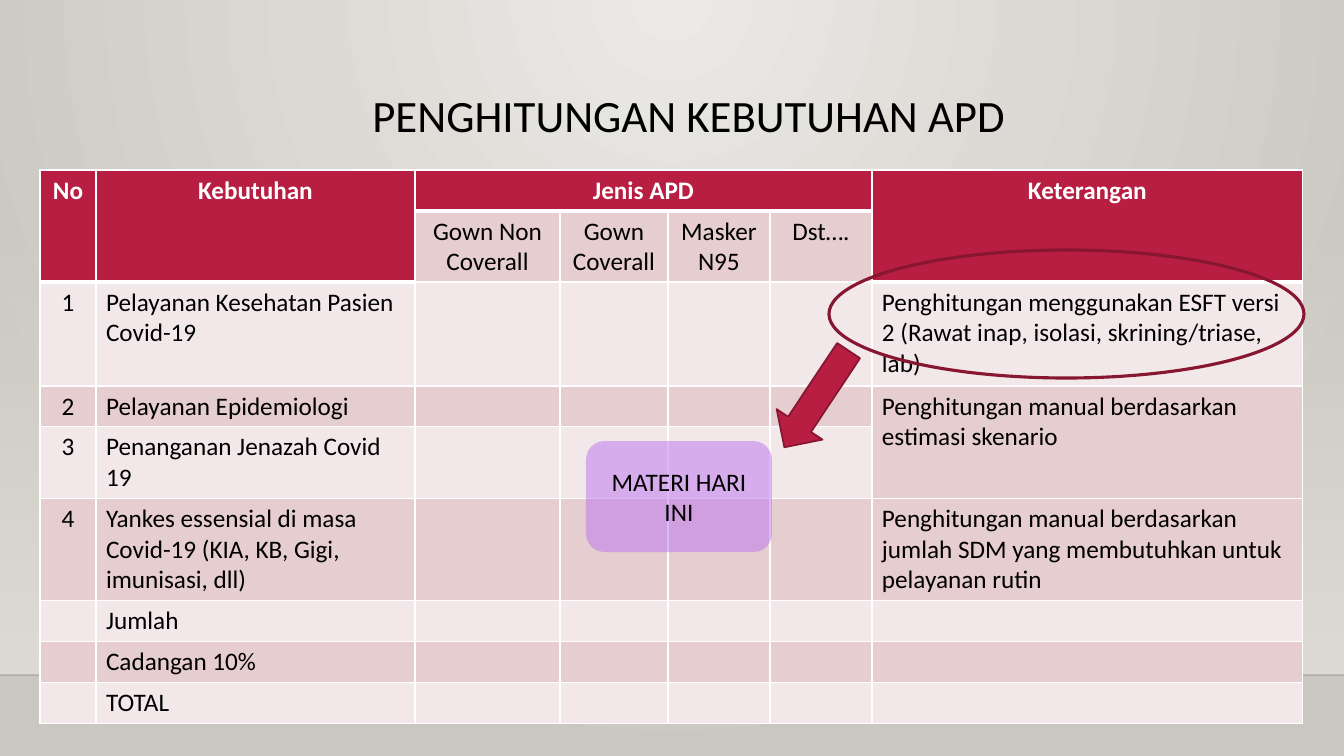
from lxml.etree import SubElement as Sub
from pptx import Presentation
from pptx.dml.color import RGBColor as RGB
from pptx.enum.shapes import MSO_CONNECTOR as Conn, MSO_SHAPE as Form
from pptx.enum.text import MSO_ANCHOR as Anchor, PP_ALIGN as Align
from pptx.oxml.ns import qn
from pptx.util import Pt

SCALE = 12192000 / 1344  # EMU per px
BLACK, WHITE = RGB(0, 0, 0), RGB(255, 255, 255)
RED, WINE = RGB(0xB7, 0x1E, 0x42), RGB(0x87, 0x16, 0x31)
ROSE, PALE = RGB(0xE6, 0xCD, 0xCF), RGB(0xF3, 0xE8, 0xE9)
LILAC, INK = RGB(0xBC, 0x72, 0xF0), RGB(0, 0, 1)
LIGHT, STONE, SAND = RGB(0xEC, 0xEA, 0xE7), RGB(0xCA, 0xC7, 0xC1), RGB(0xDF, 0xDB, 0xD5)

COLS = [56, 319, 145, 108, 102, 102, 431]
ROWS = [41, 71, 104, 40, 72, 102, 41, 41, 41]
GRID = [
    ["No", "Kebutuhan", "Jenis APD", "", "", "", "Keterangan"],
    ["", "", "Gown Non Coverall", "Gown Coverall", "Masker N95", "Dst….", ""],
    ["1", "Pelayanan Kesehatan Pasien Covid-19", "", "", "", "",
     "Penghitungan menggunakan ESFT versi 2 (Rawat inap, isolasi, skrining/triase, lab)"],
    ["2", "Pelayanan Epidemiologi", "", "", "", "",
     "Penghitungan manual berdasarkan estimasi skenario"],
    ["3", "Penanganan Jenazah Covid 19", "", "", "", "", ""],
    ["4", "Yankes essensial di masa Covid-19 (KIA, KB, Gigi, imunisasi, dll)", "", "", "", "",
     "Penghitungan manual berdasarkan jumlah SDM yang membutuhkan untuk pelayanan rutin"],
    ["", "Jumlah", "", "", "", "", ""],
    ["", "Cadangan 10%", "", "", "", "", ""],
    ["", "TOTAL", "", "", "", "", ""],
]
SPANS = [(0, 0, 1, 0), (0, 1, 1, 1), (0, 2, 0, 5), (0, 6, 1, 6), (3, 6, 4, 6)]


def px(*vals):
    return [round(v * SCALE) for v in vals]


def fade(node, part):
    """Set the opacity, in percent, of the first colour inside node."""
    tone = next(node.iter(qn("a:srgbClr")))
    Sub(tone, qn("a:alpha"), val=str(part * 1000))


class Deck:
    face = {"name": "Calibri", "size": Pt(18), "bold": False}

    def __init__(self):
        self.prs = Presentation()
        self.prs.slide_width, self.prs.slide_height = px(1344, 756)
        self.slide = self.prs.slides.add_slide(self.prs.slide_layouts[6])
        self.shapes = self.slide.shapes

    def blend(self, fill, *tones):
        fill.gradient()
        for stop, tone in zip(fill.gradient_stops, tones):
            stop.color.rgb = tone

    def ground(self):
        self.blend(self.slide.background.fill, LIGHT, STONE)
        grad = next(self.slide.element.iter(qn("a:gradFill")))
        grad.remove(grad.find(qn("a:lin")))
        ring = Sub(grad, qn("a:path"), {"path": "circle"})
        Sub(ring, qn("a:fillToRect"), l="43000", t="0", r="43000", b="100000")

    def text(self, frame, words, align=Align.CENTER, **style):
        para = frame.paragraphs[0]
        para.alignment = align
        run = para.add_run()
        run.text = words
        look = {**self.face, **style}
        run.font.color.rgb = look.pop("color", BLACK)
        for key, val in look.items():
            setattr(run.font, key, val)
        return para

    def label(self, box, words, **style):
        frame = self.shapes.add_textbox(*px(*box)).text_frame
        frame.word_wrap = True
        frame.vertical_anchor = Anchor.TOP
        self.text(frame, words, **style).line_spacing = 0.9

    def shape(self, form, box, fill=None, line=None, width=1, turn=0):
        item = self.shapes.add_shape(form, *px(*box))
        item.shadow.inherit = False
        item.rotation = turn
        if fill is None:
            item.fill.background()
        else:
            item.fill.solid()
            item.fill.fore_color.rgb = fill
        if line is None:
            item.line.fill.background()
        else:
            item.line.color.rgb = line
            item.line.width = Pt(width)
        return item

    def rule(self, ends, tone, width, part):
        item = self.shapes.add_connector(Conn.STRAIGHT, *px(*ends))
        item.line.color.rgb = tone
        item.line.width = Pt(width)
        props = item.element.spPr
        fade(props, part)
        Sub(props, qn("a:effectLst"))

    def edge(self, cell, **widths):
        props = cell._tc.get_or_add_tcPr()
        for spot, (side, width) in enumerate(widths.items()):
            line = Sub(props, qn("a:ln" + side), w=str(Pt(width)))
            Sub(Sub(line, qn("a:solidFill")), qn("a:srgbClr"), val=str(WHITE))
            props.insert(spot, line)

    def table(self, left, top):
        size = px(left, top, sum(COLS), sum(ROWS))
        table = self.shapes.add_table(len(ROWS), len(COLS), *size).table
        table.first_row = table.horz_banding = False
        for col, wide in zip(table.columns, px(*COLS)):
            col.width = wide
        for row, high in zip(table.rows, px(*ROWS)):
            row.height = high
        for r, line in enumerate(GRID):
            for c, words in enumerate(line):
                self.cell(table.cell(r, c), r, c, words)
        for r, c, last, end in SPANS:
            table.cell(r, c).merge(table.cell(last, end))

    def cell(self, cell, r, c, words):
        side = c in (0, 1, 6)
        head = r == 0 or (r == 1 and side)
        cell.fill.solid()
        cell.fill.fore_color.rgb = RED if head else ROSE if r % 2 else PALE
        above = 3 if r == 1 or (r == 2 and side) else 1
        self.edge(cell, L=1, R=1, T=above, B=3 if head else 1)
        cell.text_frame.word_wrap = True
        if words:
            mid = r < 2 or c == 0
            self.text(cell.text_frame, words, Align.CENTER if mid else Align.LEFT,
                      color=WHITE if head else BLACK, bold=head)
        else:
            cell.text_frame.paragraphs[0].font.size = self.face["size"]


def main():
    deck = Deck()

    # Backdrop: wall, floor and the line between them
    deck.ground()
    wall = deck.shape(Form.RECTANGLE, (0, 223, 1344, 452))
    deck.blend(wall.fill, SAND, SAND)
    wall.fill.gradient_angle = 270
    fade(wall.element.spPr, 0)
    deck.rule((0, 675, 1344, 675), INK, 1, 20)

    # Title and table
    deck.label((160, 89, 1058, 116), "PENGHITUNGAN KEBUTUHAN APD", size=Pt(32))
    deck.table(40, 170)

    # Marks over the table
    deck.shape(Form.OVAL, (829, 250, 475, 128), line=WINE, width=2.25)
    deck.shape(Form.DOWN_ARROW, (789, 341, 55, 116), RED, WINE, 1.25, 33.6)
    note = deck.shape(Form.ROUNDED_RECTANGLE, (586, 441, 186, 111), LILAC)
    fade(note.element.spPr, 50)
    note.text_frame.word_wrap = True
    note.text_frame.vertical_anchor = Anchor.MIDDLE
    deck.text(note.text_frame, "MATERI HARI INI")

    deck.prs.save("out.pptx")


if __name__ == "__main__":
    main()
